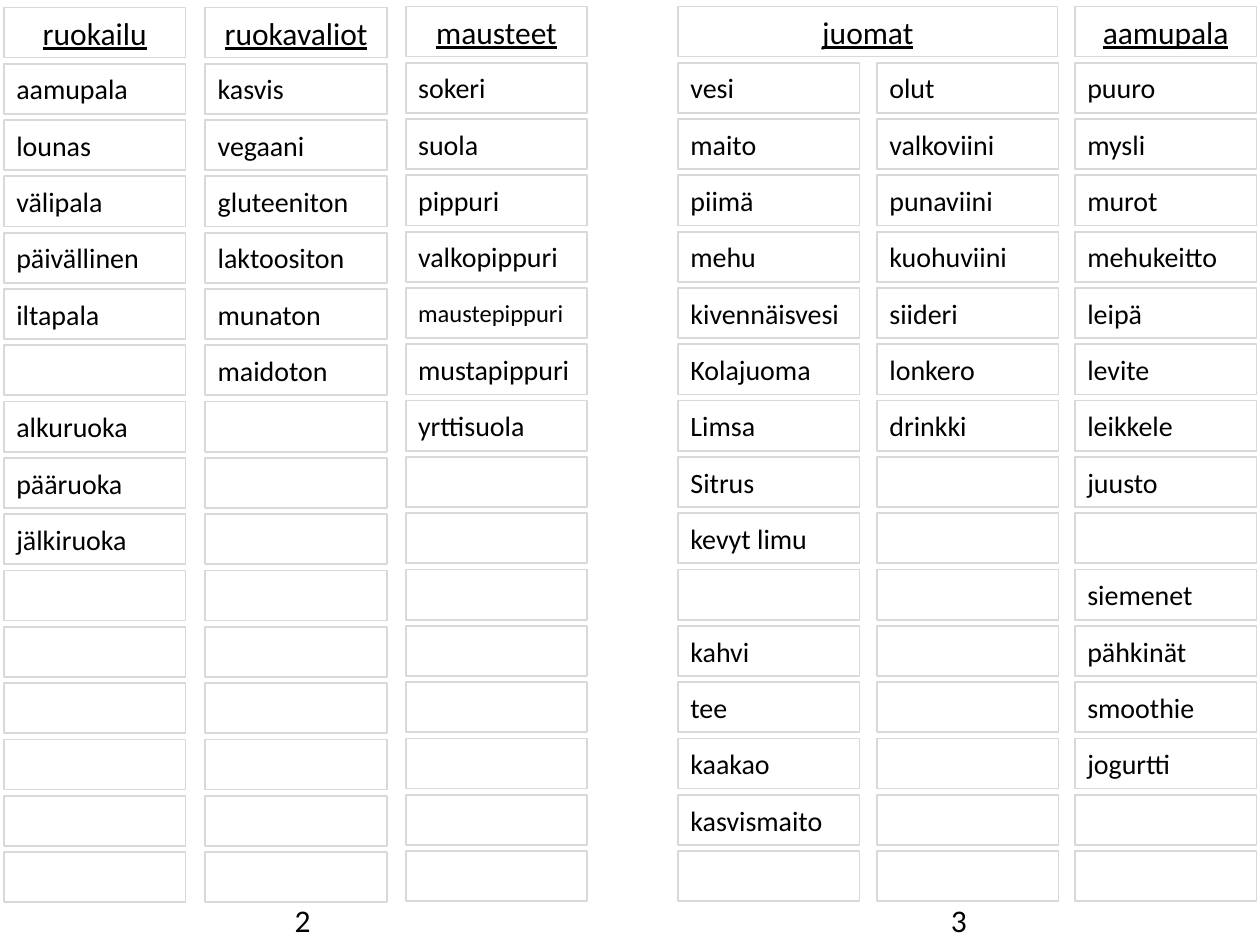
from itertools import zip_longest

from pptx import Presentation
from pptx.dml.color import RGBColor
from pptx.enum.shapes import MSO_SHAPE as Shape
from pptx.enum.text import MSO_ANCHOR as Anchor, MSO_AUTO_SIZE as AutoSize, PP_ALIGN as Align
from pptx.util import Cm, Pt

BLACK = RGBColor(0x00, 0x00, 0x00)
GREY = RGBColor(0xD9, 0xD9, 0xD9)
FONT = "Calibri"
ROWS = 15
CELL_WIDTH, CELL_HEIGHT = 3.66, 1.01
WIDE_WIDTH = 7.65
LAST_TOP = 17.17
PITCH = (LAST_TOP - 0.14) / ROWS
SMALL_WORDS = {"maustepippuri"}

COLUMNS = [
    (0.08, 0.15, CELL_WIDTH, "ruokailu",
     ["aamupala", "lounas", "välipala", "päivällinen", "iltapala", "",
      "alkuruoka", "pääruoka", "jälkiruoka"]),
    (4.14, 0.15, CELL_WIDTH, "ruokavaliot",
     ["kasvis", "vegaani", "gluteeniton", "laktoositon", "munaton", "maidoton"]),
    (8.18, 0.13, CELL_WIDTH, "mausteet",
     ["sokeri", "suola", "pippuri", "valkopippuri", "maustepippuri",
      "mustapippuri", "yrttisuola"]),
    (13.67, 0.13, WIDE_WIDTH, "juomat",
     ["vesi", "maito", "piimä", "mehu", "kivennäisvesi", "Kolajuoma", "Limsa",
      "Sitrus", "kevyt limu", "", "kahvi", "tee", "kaakao", "kasvismaito"]),
    (17.68, 0.13, CELL_WIDTH, None,
     ["olut", "valkoviini", "punaviini", "kuohuviini", "siideri", "lonkero",
      "drinkki"]),
    (21.67, 0.13, CELL_WIDTH, "aamupala",
     ["puuro", "mysli", "murot", "mehukeitto", "leipä", "levite", "leikkele",
      "juusto", "", "siemenet", "pähkinät", "smoothie", "jogurtti"]),
]
PAGE_NUMBERS = [("2", 5.69, 0.86), ("3", 18.92, 1.09)]


def write(box, text, size, align=Align.LEFT, underline=None):
    """Put one formatted line of text into a box."""
    para = box.text_frame.paragraphs[0]
    para.text = text
    para.alignment = align
    font = para.font
    font.name, font.size, font.underline = FONT, Pt(size), underline
    font.color.rgb = BLACK


def frame(box):
    """Give a box a thin grey outline, no fill and centred height."""
    box.fill.background()
    box.line.color.rgb = GREY
    box.line.width = Pt(1)
    box.text_frame.vertical_anchor = Anchor.MIDDLE
    box.text_frame.word_wrap = True
    box.text_frame.auto_size = AutoSize.NONE


def add_cell(page, left, top, width=CELL_WIDTH):
    """Add an outlined rectangle."""
    box = page.shapes.add_shape(Shape.RECTANGLE, Cm(left), Cm(top), Cm(width), Cm(CELL_HEIGHT))
    box.shadow.inherit = False
    frame(box)
    return box


def place_title(page, left, top, width):
    """Move the title placeholder and outline it like a cell."""
    box = page.shapes.title
    box.left, box.top, box.width, box.height = Cm(left), Cm(top), Cm(width), Cm(CELL_HEIGHT)
    frame(box)
    return box


def add_column(page, left, top, width, heading, words, is_title):
    """Add a heading and the word cells below it."""
    if heading:
        make = place_title if is_title else add_cell
        write(make(page, left, top, width), heading, 18, Align.CENTER, True)
    for row, word in zip_longest(range(1, ROWS + 1), words, fillvalue=""):
        box = add_cell(page, left, top + row * PITCH)
        if word:
            write(box, word, 14 if word in SMALL_WORDS else 16)


def add_page_number(page, number, left, width):
    """Add a page number at the foot of a half page."""
    box = page.shapes.add_textbox(Cm(left), Cm(18.03), Cm(width), Cm(1.03))
    box.text_frame.word_wrap = True
    box.text_frame.auto_size = AutoSize.SHAPE_TO_FIT_TEXT
    write(box, number, 18)


def main():
    """Build the word list spread."""
    deck = Presentation()
    deck.slide_width, deck.slide_height = Cm(25.4), Cm(19.05)
    page = deck.slides.add_slide(deck.slide_layouts[5])
    for number in PAGE_NUMBERS:
        add_page_number(page, *number)
    for index, column in enumerate(COLUMNS):
        add_column(page, *column, is_title=index == 0)
    deck.save("out.pptx")


if __name__ == "__main__":
    main()
